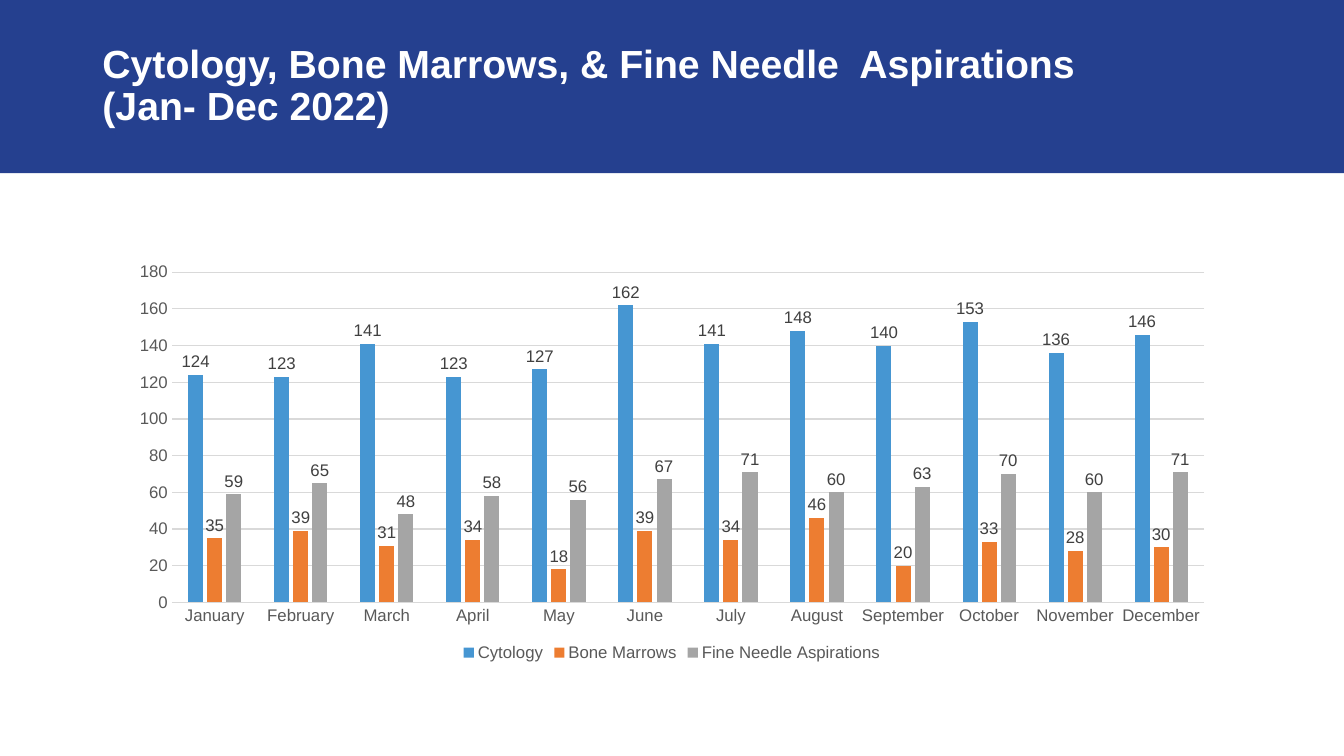
"""Build the 2022 specimen volume slide with its clustered column chart."""
from pptx import Presentation
from pptx import util as u
from pptx.chart.data import CategoryChartData
from pptx.dml.color import RGBColor
from pptx.enum import chart as charts, shapes, text

PX = 9525
FONT = "Arial"
COLORS = {
    "band": "25408F",
    "title": "FFFFFF",
    "axis": "595959",
    "label": "404040",
    "grid": "D9D9D9",
}
MONTHS = [
    "January", "February", "March", "April", "May", "June", "July",
    "August", "September", "October", "November", "December",
]
SERIES = [
    ("Cytology", "4696D2",
     [124, 123, 141, 123, 127, 162, 141, 148, 140, 153, 136, 146]),
    ("Bone Marrows", "ED7D31",
     [35, 39, 31, 34, 18, 39, 34, 46, 20, 33, 28, 30]),
    ("Fine Needle Aspirations", "A5A5A5",
     [59, 65, 48, 58, 56, 67, 71, 60, 63, 70, 60, 71]),
]


def px(*lengths):
    """Turn whole pixels into a list of EMU lengths."""
    return [u.Emu(length * PX) for length in lengths]


def rgb(name):
    """Look up a named colour."""
    return RGBColor.from_string(COLORS[name])


def style_font(font, size, color, bold=False):
    """Set the face, size, colour and weight of a font."""
    font.name = FONT
    font.size = u.Pt(size)
    font.bold = bold
    font.color.rgb = rgb(color)


def style_line(line, color):
    """Give a chart line its colour and thin width."""
    line.color.rgb = rgb(color)
    line.width = u.Pt(0.75)


def add_band(page, *frame):
    """Add the header band behind everything else."""
    band = page.shapes.add_shape(shapes.MSO_SHAPE.RECTANGLE, *px(*frame))
    band.shadow.inherit = False
    band.fill.solid()
    band.fill.fore_color.rgb = rgb("band")
    band.line.fill.background()
    page.shapes._spTree.insert(2, band._element)


def set_title(page, wording, *frame):
    """Place and format the title placeholder."""
    title = page.shapes.title
    title.left, title.top, title.width, title.height = px(*frame)
    box = title.text_frame
    box.text = wording
    box.word_wrap = True
    box.auto_size = text.MSO_AUTO_SIZE.NONE
    box.vertical_anchor = text.MSO_ANCHOR.MIDDLE
    para = box.paragraphs[0]
    para.alignment = text.PP_ALIGN.LEFT
    para.line_spacing = 0.9
    for span in para.runs:
        style_font(span.font, 28, "title", bold=True)


def style_axis(axis):
    """Format the features that both axes share."""
    axis.major_tick_mark = charts.XL_TICK_MARK.NONE
    axis.minor_tick_mark = charts.XL_TICK_MARK.NONE
    style_font(axis.tick_labels.font, 12, "axis")


def style_series(series, color):
    """Fill the columns of a series and label their values."""
    series.format.fill.solid()
    series.format.fill.fore_color.rgb = RGBColor.from_string(color)
    series.invert_if_negative = False
    labels = series.data_labels
    labels.show_value = True
    labels.position = charts.XL_LABEL_POSITION.OUTSIDE_END
    style_font(labels.font, 12, "label")


def add_volume_chart(page, *frame):
    """Add the monthly clustered column chart."""
    data = CategoryChartData()
    data.categories = MONTHS
    for name, _, values in SERIES:
        data.add_series(name, values)
    chart = page.shapes.add_chart(
        charts.XL_CHART_TYPE.COLUMN_CLUSTERED, *px(*frame), data
    ).chart
    chart.has_title = False
    chart.font.name = FONT
    chart.font.size = u.Pt(10)

    plot = chart.plots[0]
    plot.gap_width = 219
    plot.overlap = -27
    plot.vary_by_categories = False
    for series, (_, color, _) in zip(plot.series, SERIES):
        style_series(series, color)

    style_axis(chart.category_axis)
    style_line(chart.category_axis.format.line, "grid")
    value_axis = chart.value_axis
    style_axis(value_axis)
    value_axis.minimum_scale = 0
    value_axis.maximum_scale = 180
    value_axis.major_unit = 20
    value_axis.format.line.fill.background()
    value_axis.has_major_gridlines = True
    style_line(value_axis.major_gridlines.format.line, "grid")

    chart.has_legend = True
    chart.legend.position = charts.XL_LEGEND_POSITION.BOTTOM
    chart.legend.include_in_layout = False
    style_font(chart.legend.font, 12, "axis")


def main():
    """Build and save the slide."""
    deck = Presentation()
    deck.slide_width, deck.slide_height = px(1280, 720)
    page = deck.slides.add_slide(deck.slide_layouts[5])
    add_band(page, 0, 0, 1280, 165)
    set_title(
        page,
        "Cytology, Bone Marrows, & Fine Needle  Aspirations \v(Jan- Dec 2022)",
        88, 13, 1104, 139,
    )
    add_volume_chart(page, 112, 243, 1056, 391)
    deck.save("out.pptx")


if __name__ == "__main__":
    main()
